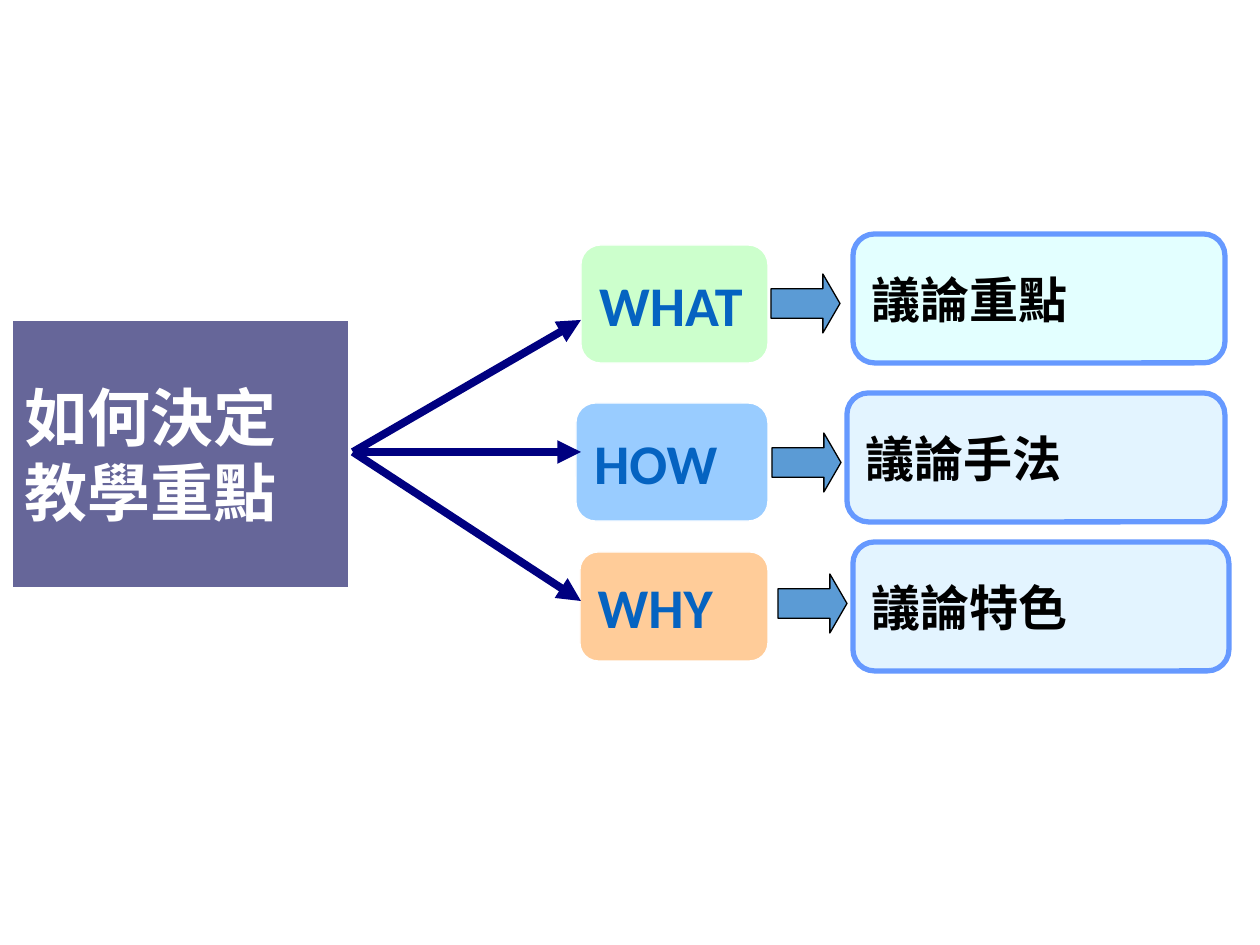
from pptx import Presentation
from pptx.dml.color import RGBColor
from pptx.enum.shapes import MSO_CONNECTOR, MSO_SHAPE
from pptx.enum.text import MSO_ANCHOR, PP_ALIGN
from pptx.oxml.ns import qn
from pptx.oxml.xmlchemy import OxmlElement
from pptx.util import Pt

PX = 914400 // 126
COLORS = {
    "white": "FFFFFF", "black": "000000", "topic": "666699",
    "question": "0563C1", "green": "CCFFCC", "blue": "99CCFF",
    "orange": "FFCC99", "aqua": "CCFFFF", "sky": "CCECFF",
    "border": "6699FF", "arrow": "5B9BD5", "navy": "000080",
}
LATIN, CJK = "Calibri", "Noto Sans CJK SC"

# Each row: question, its box and fill, block arrow, answer, its box and fill
ROWS = [
    ("WHAT", (581, 245, 187, 118), "green", (771, 274),
     "議論重點", (853, 234, 372, 129), "aqua"),
    ("HOW", (576, 403, 192, 118), "blue", (772, 433),
     "議論手法", (847, 393, 378, 129), "sky"),
    ("WHY", (580, 552, 188, 109), "orange", (778, 574),
     "議論特色", (853, 542, 376, 129), "sky"),
]
BRANCH_START = (353, 452)
BRANCH_END_X = 581
BRANCH_END_YS = (320, 452, 601)


def rgb(name):
    return RGBColor.from_string(COLORS[name])


def add_element(parent, tag, **attributes):
    element = OxmlElement(tag)
    for key, value in attributes.items():
        element.set(key, value)
    parent.append(element)
    return element


def add_box(slide, kind, box, fill, line, width=0.75, opacity=None):
    shape = slide.shapes.add_shape(kind, *(v * PX for v in box))
    shape.shadow.inherit = False
    shape.fill.solid()
    shape.fill.fore_color.rgb = rgb(fill)
    if opacity is not None:
        color = shape._element.spPr.find(qn("a:solidFill"))[0]
        add_element(color, "a:alpha", val=str(opacity * 1000))
    shape.line.color.rgb = rgb(line)
    shape.line.width = Pt(width)
    return shape


def write_text(shape, text, size, font, color):
    frame = shape.text_frame
    frame.word_wrap = False
    frame.vertical_anchor = MSO_ANCHOR.MIDDLE
    frame.text = text
    for paragraph in frame.paragraphs:
        paragraph.alignment = PP_ALIGN.LEFT
        paragraph.font.size = Pt(size)
        paragraph.font.bold = True
        paragraph.font.color.rgb = rgb(color)
        paragraph.font.name = font
        # Chinese characters take the same font
        properties = paragraph._p.pPr.find(qn("a:defRPr"))
        add_element(properties, "a:ea", typeface=font)


def add_branch(slide, end_y):
    points = (*BRANCH_START, BRANCH_END_X, end_y)
    branch = slide.shapes.add_connector(
        MSO_CONNECTOR.STRAIGHT, *(v * PX for v in points))
    branch.line.color.rgb = rgb("navy")
    branch.line.width = Pt(4.5)
    add_element(branch.line._get_or_add_ln(), "a:tailEnd", type="triangle")
    add_element(branch._element.spPr, "a:effectLst")


def add_row(slide, question, question_box, question_fill, arrow_at,
            answer, answer_box, answer_fill):
    rounded = MSO_SHAPE.ROUNDED_RECTANGLE
    question_shape = add_box(slide, rounded, question_box, question_fill, "white")
    write_text(question_shape, question, 32, LATIN, "question")

    answer_shape = add_box(slide, rounded, answer_box, answer_fill, "border",
                           width=3, opacity=55)
    write_text(answer_shape, answer, 28, CJK, "black")

    arrow = add_box(slide, MSO_SHAPE.RIGHT_ARROW, (*arrow_at, 69, 59),
                    "arrow", "black")
    arrow.adjustments[1] = 0.29


def main():
    deck = Presentation()
    deck.slide_width, deck.slide_height = 1260 * PX, 945 * PX
    slide = deck.slides.add_slide(deck.slide_layouts[6])

    # Topic on the left
    topic = add_box(slide, MSO_SHAPE.RECTANGLE, (12, 320, 337, 268),
                    "topic", "white")
    write_text(topic, "如何決定\n教學重點", 36, LATIN, "white")

    # Questions and their answers
    for row in ROWS:
        add_row(slide, *row)

    # Branches from the topic to the questions
    for end_y in BRANCH_END_YS:
        add_branch(slide, end_y)

    deck.save("out.pptx")


if __name__ == "__main__":
    main()
